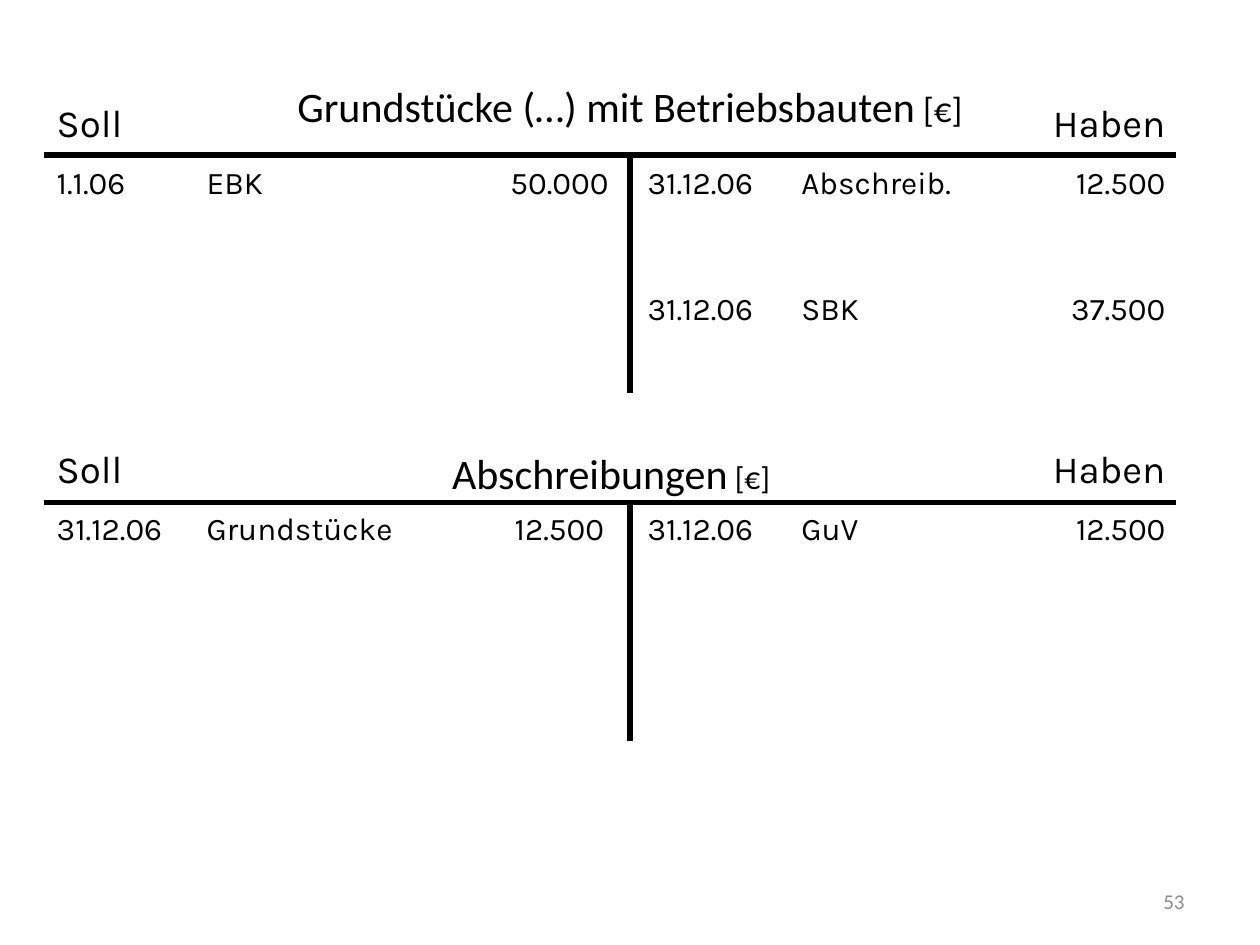
from lxml import etree
from pptx import Presentation
from pptx.dml.color import RGBColor
from pptx.enum import shapes, text
from pptx.oxml.ns import qn
from pptx.util import Inches, Pt

# Content: one dict per T-account; table rows run date, item, amount on both sides
UNIT = " [€]"
PAGE_NUMBER = "53"
HEADINGS = ["Soll", "", "", "", "", "Haben"]
ACCOUNTS = [
    {
        "title": "Grundstücke (…) mit Betriebsbauten", "unit_size": 20,
        "title_place": (0.5, 0.44, 9, 0.79),
        "top": 0.76, "rule": 1.23,
        "entries": [
            ["1.1.06", "EBK", "50.000", "31.12.06", "Abschreib.", "12.500"],
            ["", "", "", "31.12.06", "SBK", "37.500"],
        ],
    },
    {
        "title": "Abschreibungen", "unit_size": 18,
        "title_place": (0.35, 3.36, 9, 0.79),
        "top": 3.51, "rule": 3.99,
        "entries": [
            ["31.12.06", "Grundstücke", "12.500", "31.12.06", "GuV", "12.500"],
            [""] * 6,
        ],
    },
]

THEME = {
    "ink": RGBColor(0, 0, 0), "muted": RGBColor(0x8C, 0x8C, 0x8C),
    "title_font": "Calibri", "table_font": "Karla",
    "title": 24, "heading": 22, "entry": 18, "number": 12, "rule": 3,
}

# Layout, in inches
LEFT, RIGHT, MIDDLE, STEM = 0.35, 9.33, 5, 1.89
COLUMNS = [1.19, 2.3, 1.2, 1.22, 1.89, 1.2]
ROWS = [0.5, 1, 0.92]
ALIGN = text.PP_ALIGN
COLUMN_ALIGN = [ALIGN.LEFT, ALIGN.LEFT, ALIGN.CENTER, ALIGN.LEFT, ALIGN.LEFT, ALIGN.RIGHT]


def style(font, name, size, color):
    font.name, font.size, font.bold = name, Pt(size), False
    font.color.rgb = color


def fill_box(box, spans, align):
    """Write (words, size, color) spans as one vertically centred paragraph."""
    frame = box.text_frame
    frame.word_wrap = True
    frame.auto_size = text.MSO_AUTO_SIZE.NONE
    frame.vertical_anchor = text.MSO_ANCHOR.MIDDLE
    para = frame.paragraphs[0]
    para.alignment = align
    for words, size, color in spans:
        span = para.add_run()
        span.text = words
        style(span.font, THEME["title_font"], size, color)


def add_rule(page, x1, y1, x2, y2):
    line = page.shapes.add_connector(
        shapes.MSO_CONNECTOR.STRAIGHT, *map(Inches, (x1, y1, x2, y2)))
    line.line.color.rgb = THEME["ink"]
    line.line.width = Pt(THEME["rule"])
    etree.SubElement(line._element.spPr, qn("a:effectLst"))


def clear_cell(cell):
    """Remove fill and borders, so the table hides nothing behind it."""
    cell.fill.background()
    properties = cell._tc.get_or_add_tcPr()
    for position, side in enumerate(("a:lnL", "a:lnR", "a:lnT", "a:lnB")):
        border = etree.Element(qn(side), w="0")
        etree.SubElement(border, qn("a:noFill"))
        properties.insert(position, border)


def add_entries(page, account):
    frame = page.shapes.add_table(
        len(ROWS), len(COLUMNS), Inches(LEFT), Inches(account["top"]),
        Inches(sum(COLUMNS)), Inches(sum(ROWS)))
    table = frame.table
    table.first_row = table.horz_banding = False
    for column, width in zip(table.columns, COLUMNS):
        column.width = Inches(width)
    for row, height in zip(table.rows, ROWS):
        row.height = Inches(height)
    for r, values in enumerate([HEADINGS] + account["entries"]):
        size = THEME["entry"] if r else THEME["heading"]
        for c, value in enumerate(values):
            cell = table.cell(r, c)
            clear_cell(cell)
            cell.text_frame.text = value
            para = cell.text_frame.paragraphs[0]
            para.alignment = COLUMN_ALIGN[c]
            for span in para.runs:
                style(span.font, THEME["table_font"], size, THEME["ink"])
    table.cell(0, 1).merge(table.cell(0, 2))


def add_account(page, account, title_box):
    # Ledger table, then the T drawn over it
    add_entries(page, account)
    add_rule(page, LEFT, account["rule"], RIGHT, account["rule"])
    add_rule(page, MIDDLE, account["rule"], MIDDLE, account["rule"] + STEM)
    # Account name
    place = [Inches(value) for value in account["title_place"]]
    if title_box is None:
        title_box = page.shapes.add_textbox(*place)
    title_box.left, title_box.top, title_box.width, title_box.height = place
    spans = [(account["title"], THEME["title"], THEME["ink"]),
             (UNIT, account["unit_size"], THEME["ink"])]
    fill_box(title_box, spans, ALIGN.CENTER)


def main():
    deck = Presentation()
    deck.slide_width, deck.slide_height = Inches(10), Inches(7.5)
    page = deck.slides.add_slide(deck.slide_layouts[5])
    for account, title_box in zip(ACCOUNTS, (page.shapes.title, None)):
        add_account(page, account, title_box)
    # Page number
    number = page.shapes.add_textbox(*map(Inches, (7.17, 6.95, 2.33, 0.4)))
    fill_box(number, [(PAGE_NUMBER, THEME["number"], THEME["muted"])], ALIGN.RIGHT)
    deck.save("out.pptx")


if __name__ == "__main__":
    main()
